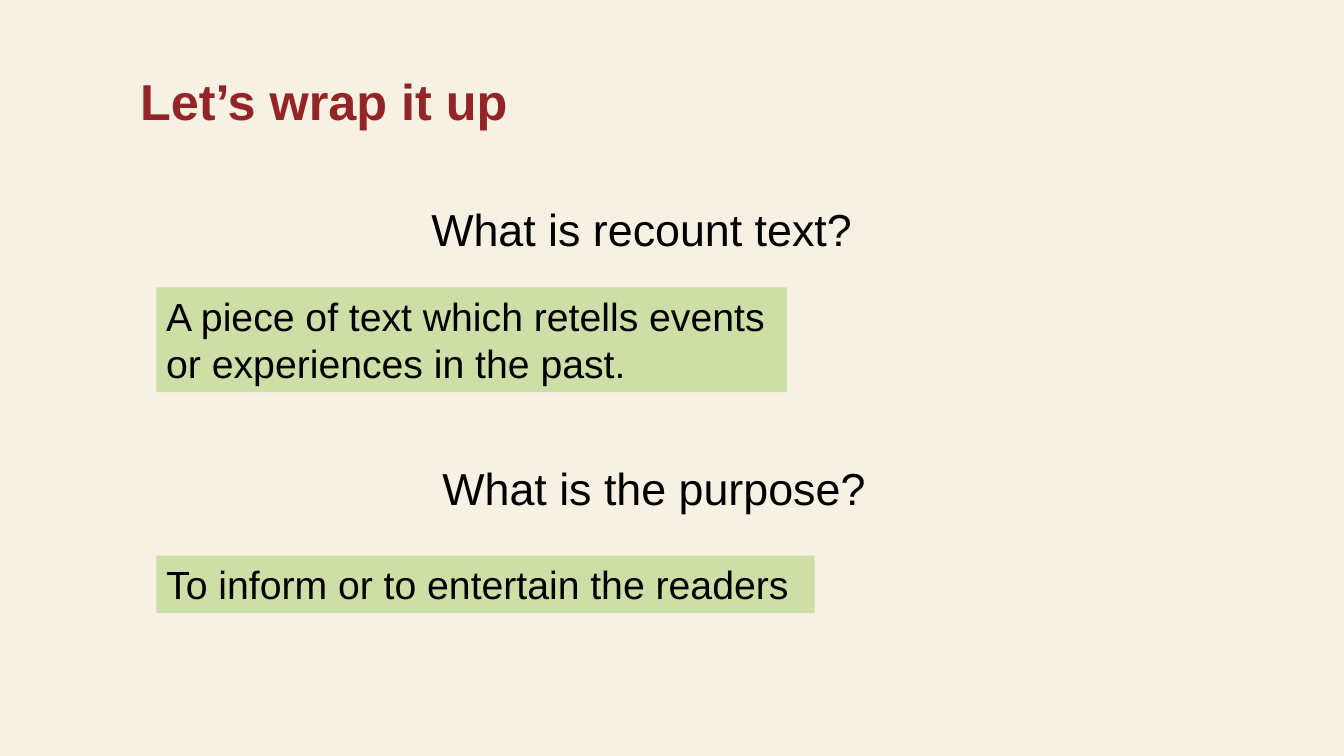
import dataclasses

import pptx
import pptx.dml.color
import pptx.enum.shapes
import pptx.enum.text
import pptx.slide
import pptx.util

Cm = pptx.util.Cm
FONT = "Arial"
CREAM, RED, GREEN, BLACK = "F7F1E4", "942526", "CEDEA7", "000000"


@dataclasses.dataclass
class Box:
    text: str
    left: float
    top: float
    width: float
    height: float


def paint(fill, color: str) -> None:
    fill.solid()
    fill.fore_color.rgb = pptx.dml.color.RGBColor.from_string(color)


def write(shape, text: str, *, size: float, color: str = BLACK,
          bold: bool = False, space: float = 1.0) -> None:
    frame = shape.text_frame
    frame.word_wrap = True
    frame.vertical_anchor = pptx.enum.text.MSO_ANCHOR.TOP
    line = frame.paragraphs[0]
    line.text = text
    line.alignment = pptx.enum.text.PP_ALIGN.LEFT
    line.line_spacing = space
    font = line.runs[0].font
    font.name, font.size, font.bold = FONT, pptx.util.Pt(size), bold
    font.color.rgb = pptx.dml.color.RGBColor.from_string(color)


def label(slide: pptx.slide.Slide, box: Box, **style) -> None:
    shape = slide.shapes.add_textbox(
        Cm(box.left), Cm(box.top), Cm(box.width), Cm(box.height))
    write(shape, box.text, space=1.5, **style)


def panel(slide: pptx.slide.Slide, box: Box) -> None:
    shape = slide.shapes.add_shape(
        pptx.enum.shapes.MSO_SHAPE.RECTANGLE,
        Cm(box.left), Cm(box.top), Cm(box.width), Cm(box.height))
    shape.shadow.inherit = False
    paint(shape.fill, GREEN)
    shape.line.fill.background()
    write(shape, box.text, size=28)


TITLE = Box("Let’s wrap it up", 3.28, 0.89, 10.36, 2.29)
ASKS = [
    Box("What is recount text?", 10.62, 4.27, 12.65, 2.06),
    Box("What is the purpose?", 10.9, 10.8, 12.65, 2.06),
]
REPLIES = [
    Box("A piece of text which retells events or experiences in the past.",
        3.94, 7.24, 15.9, 2.64),
    Box("To inform or to entertain the readers", 3.94, 14, 16.59, 1.45),
]


def main() -> None:
    deck = pptx.Presentation()
    deck.slide_width, deck.slide_height = Cm(33.87), Cm(19.05)
    slide = deck.slides.add_slide(deck.slide_layouts[6])
    paint(slide.background.fill, CREAM)

    # Title
    label(slide, TITLE, size=36, color=RED, bold=True)

    # Questions, each with its answer below
    for ask, reply in zip(ASKS, REPLIES):
        label(slide, ask, size=32)
        panel(slide, reply)

    deck.save("out.pptx")


if __name__ == "__main__":
    main()
